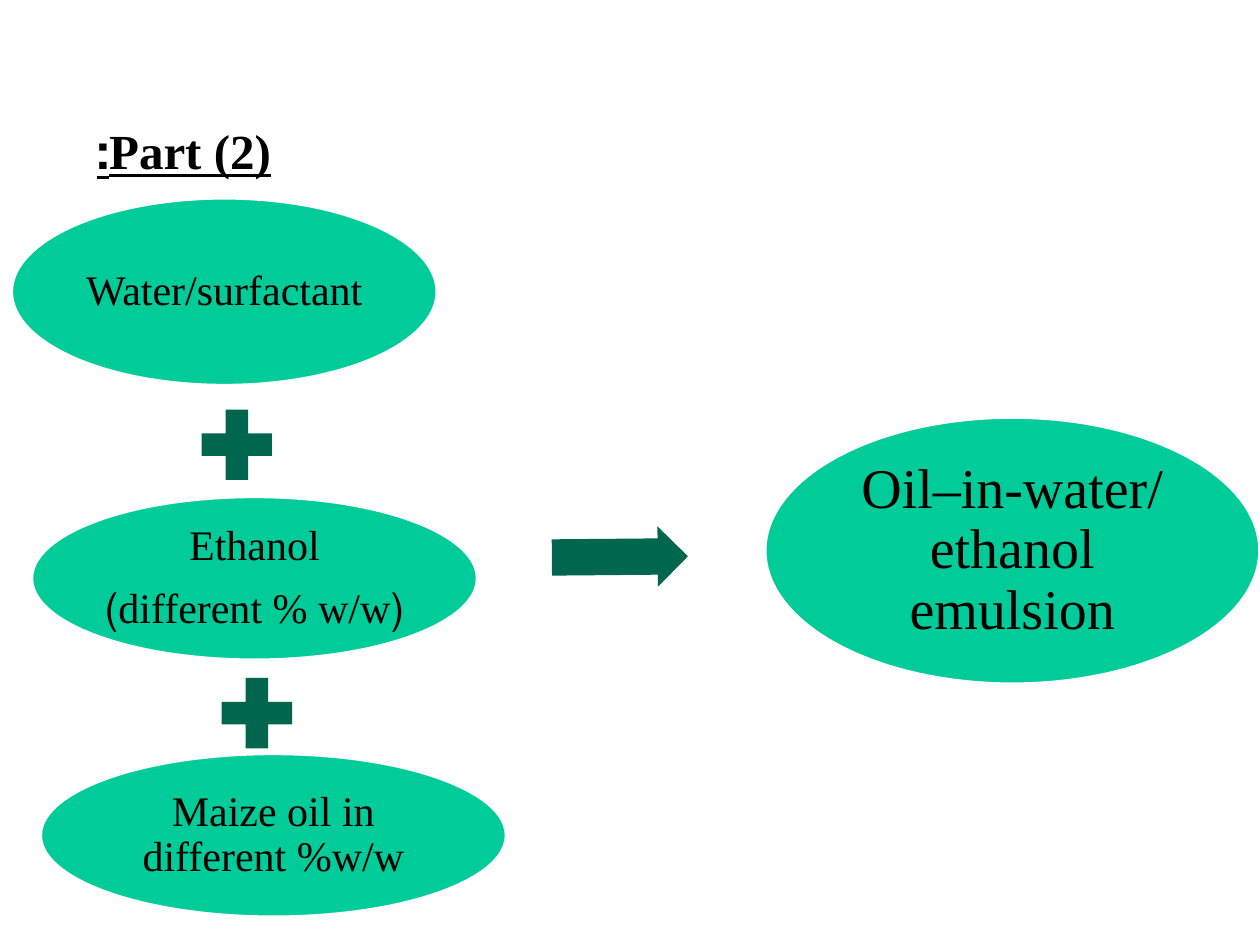
from dataclasses import dataclass

from pptx import Presentation
from pptx.dml.color import RGBColor
from pptx.enum.shapes import MSO_SHAPE as Preset
from pptx.enum.text import MSO_ANCHOR as Anchor
from pptx.enum.text import MSO_AUTO_SIZE as AutoSize
from pptx.enum.text import PP_ALIGN as Align
from pptx.util import Inches, Pt


@dataclass(frozen=True)
class Theme:
    font: str = "Times New Roman"
    text: RGBColor = RGBColor(0, 0, 0)
    background: RGBColor = RGBColor(0xFF, 0xFF, 0xFF)
    ingredient: RGBColor = RGBColor(0x00, 0xCC, 0x99)
    operator: RGBColor = RGBColor(0x00, 0x66, 0x4D)
    title_size: int = 28
    ingredient_size: int = 24
    product_size: int = 32


def write_text(frame, lines, *, theme, size, align=Align.CENTER, anchor=Anchor.MIDDLE,
               bold=False, underline=False, margin=None, line_spacing=None, gap=0):
    frame.word_wrap = True
    frame.vertical_anchor = anchor
    if margin is not None:
        for side in ("left", "top", "right", "bottom"):
            setattr(frame, f"margin_{side}", Inches(margin))
    for index, line in enumerate(lines):
        paragraph = frame.add_paragraph() if index else frame.paragraphs[0]
        paragraph.alignment = align
        paragraph._p.get_or_add_pPr().set("rtl", "1")
        paragraph.line_spacing = line_spacing
        paragraph.space_after = Pt(gap)
        run = paragraph.add_run()
        run.text = line
        run.font.name = theme.font
        run.font.size = Pt(size)
        run.font.bold = bold
        run.font.underline = underline
        run.font.color.rgb = theme.text


class SlideBuilder:
    def __init__(self, presentation, theme):
        self.theme = theme
        self.slide = presentation.slides.add_slide(presentation.slide_layouts[5])
        self.slide.background.fill.solid()
        self.slide.background.fill.fore_color.rgb = theme.background

    def title(self, text, left, top, width, height):
        shape = self.slide.shapes.title
        shape.left, shape.top = Inches(left), Inches(top)
        shape.width, shape.height = Inches(width), Inches(height)
        write_text(shape.text_frame, [text], theme=self.theme, size=self.theme.title_size,
                   align=Align.RIGHT, anchor=Anchor.TOP, bold=True, underline=True)
        shape.text_frame.auto_size = AutoSize.SHAPE_TO_FIT_TEXT

    def preset(self, kind, left, top, width, height, color):
        shape = self.slide.shapes.add_shape(
            kind, Inches(left), Inches(top), Inches(width), Inches(height))
        shape.shadow.inherit = False
        shape.fill.solid()
        shape.fill.fore_color.rgb = color
        shape.line.fill.background()
        return shape

    def ellipse(self, lines, left, top, width, height, size, margin=0.03):
        shape = self.preset(Preset.OVAL, left, top, width, height, self.theme.ingredient)
        shape.line.color.rgb = self.theme.background
        shape.line.width = Pt(2)
        write_text(shape.text_frame, lines, theme=self.theme, size=size,
                   margin=margin, line_spacing=0.9, gap=round(size * 0.4, 1))

    def plus(self, left, top, side=0.76):
        self.preset(Preset.MATH_PLUS, left, top, side, side, self.theme.operator)

    def arrow(self, left, top, width, height, rotation):
        shape = self.preset(Preset.RIGHT_ARROW, left, top, width, height, self.theme.operator)
        shape.adjustments[0] = 0.6
        shape.adjustments[1] = 0.5
        shape.rotation = rotation


def main():
    presentation = Presentation()
    presentation.slide_width = Inches(10)
    presentation.slide_height = Inches(7.5)
    theme = Theme()
    builder = SlideBuilder(presentation, theme)

    builder.title("Part (2):", 0.62, 0.91, 1.63, 0.57)

    ingredients = [
        (["Water/surfactant"], 0.09, 1.57, 3.38, 1.49),
        (["Ethanol", "(different % w/w)"], 0.25, 3.94, 3.54, 1.3),
        (["Maize oil in different %w/w"], 0.32, 5.98, 3.7, 1.3),
    ]
    for ingredient in ingredients:
        builder.ellipse(*ingredient, size=theme.ingredient_size)
    for left, top in [(1.5, 3.15), (1.66, 5.28)]:
        builder.plus(left, top)

    builder.arrow(4.38, 4.18, 1.08, 0.48, rotation=359.5)
    builder.ellipse(["Oil–in-water/ethanol emulsion"], 6.07, 3.31, 3.93, 2.12,
                    size=theme.product_size, margin=0.04)

    presentation.save("out.pptx")


if __name__ == "__main__":
    main()
